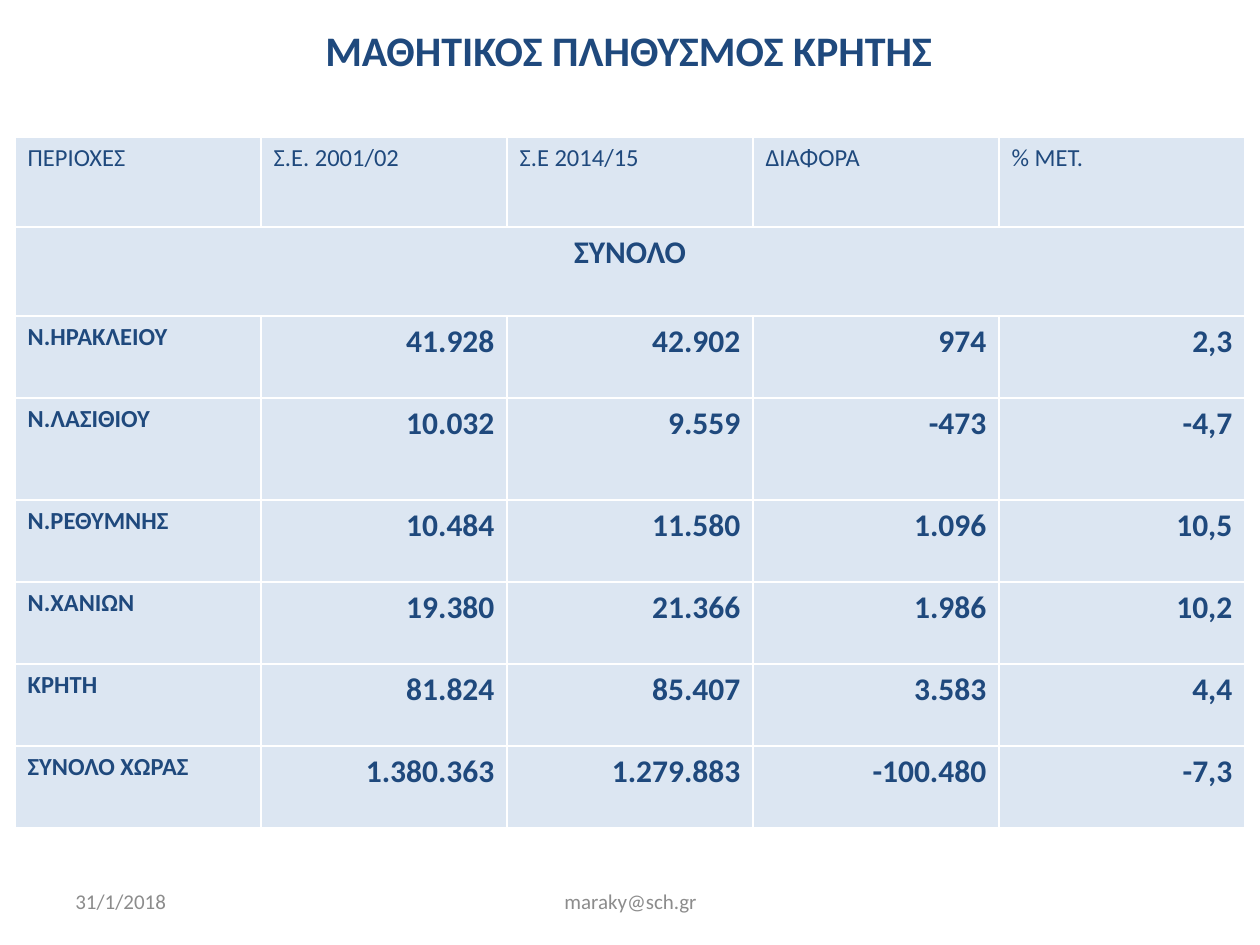
import pptx
import pptx.util
import pptx.dml.color
import pptx.enum.text
import pptx.oxml
import pptx.oxml.ns

Inches = pptx.util.Inches
Pt = pptx.util.Pt
ALIGN = pptx.enum.text.PP_ALIGN
MIDDLE = pptx.enum.text.MSO_ANCHOR.MIDDLE

COLORS = {"navy": "1F497D", "pale": "DCE6F2", "white": "FFFFFF", "gray": "8C8C8C"}
FONT = "Calibri"

HEADS = ["ΠΕΡΙΟΧΕΣ", "Σ.Ε. 2001/02", "Σ.Ε 2014/15", "ΔΙΑΦΟΡΑ", "% ΜΕΤ."]
GROUP = "ΣΥΝΟΛΟ"
AREAS = [
    ["Ν.ΗΡΑΚΛΕΙΟΥ", "41.928", "42.902", "974", "2,3"],
    ["Ν.ΛΑΣΙΘΙΟΥ", "10.032", "9.559", "-473", "-4,7"],
    ["Ν.ΡΕΘΥΜΝΗΣ", "10.484", "11.580", "1.096", "10,5"],
    ["Ν.ΧΑΝΙΩΝ", "19.380", "21.366", "1.986", "10,2"],
    ["ΚΡΗΤΗ", "81.824", "85.407", "3.583", "4,4"],
    ["ΣΥΝΟΛΟ ΧΩΡΑΣ", "1.380.363", "1.279.883", "-100.480", "-7,3"],
]
HEIGHTS = [0.71, 0.71, 0.65, 0.81, 0.65, 0.65, 0.65, 0.65]


def rgb(name):
    return pptx.dml.color.RGBColor.from_string(COLORS[name])


def write(frame, text, size=14, color="navy", bold=False, align=ALIGN.LEFT):
    para = frame.paragraphs[0]
    para.alignment = align
    run = para.add_run()
    run.text = text
    font = run.font
    font.name, font.size, font.bold = FONT, Pt(size), bold
    font.color.rgb = rgb(color)


def edge(cell, color="white", width=1):
    """Draw all four borders of a cell; they must come before its fill."""
    props = cell._tc.get_or_add_tcPr()
    for spot, side in enumerate("LRTB"):
        props.insert(spot, pptx.oxml.parse_xml(
            f'<a:ln{side} {pptx.oxml.ns.nsdecls("a")} w="{Pt(width)}">'
            f'<a:solidFill><a:srgbClr val="{COLORS[color]}"/></a:solidFill>'
            f'</a:ln{side}>'))


class Page:
    def __init__(self, deck):
        self.slide = deck.slides.add_slide(deck.slide_layouts[5])

    def title(self, text, box):
        shape = self.slide.shapes.title
        shape.left, shape.top, shape.width, shape.height = map(Inches, box)
        shape.text_frame.vertical_anchor = MIDDLE
        write(shape.text_frame, text, size=24, bold=True, align=ALIGN.CENTER)

    def note(self, text, box, align=ALIGN.LEFT):
        frame = self.slide.shapes.add_textbox(*map(Inches, box)).text_frame
        frame.word_wrap = True
        frame.vertical_anchor = MIDDLE
        write(frame, text, size=12, color="gray", align=align)

    def table(self, left, top, width):
        box = map(Inches, (left, top, width, sum(HEIGHTS)))
        grid = self.slide.shapes.add_table(len(HEIGHTS), len(HEADS), *box).table
        for row, high in zip(grid.rows, HEIGHTS):
            row.height = Inches(high)
        for cell in grid.iter_cells():
            cell.fill.solid()
            cell.fill.fore_color.rgb = rgb("pale")
            edge(cell)

        for col, head in enumerate(HEADS):
            write(grid.cell(0, col).text_frame, head)
        band = grid.cell(1, 0)
        band.merge(grid.cell(1, len(HEADS) - 1))
        write(band.text_frame, GROUP, size=18, bold=True, align=ALIGN.CENTER)
        for row, (area, *counts) in enumerate(AREAS, 2):
            write(grid.cell(row, 0).text_frame, area, bold=True)
            for col, count in enumerate(counts, 1):
                write(grid.cell(row, col).text_frame, count,
                      size=18, bold=True, align=ALIGN.RIGHT)


def main():
    deck = pptx.Presentation()
    deck.slide_width, deck.slide_height = Inches(10), Inches(7.5)
    page = Page(deck)
    page.title("ΜΑΘΗΤΙΚΟΣ ΠΛΗΘΥΣΜΟΣ ΚΡΗΤΗΣ", (0.48, 0.11, 9.02, 0.57))
    page.table(0.12, 1.09, 9.76)
    page.note("maraky@sch.gr", (3.42, 6.95, 3.17, 0.4), align=ALIGN.CENTER)
    page.note("31/1/2018", (0.5, 6.95, 2.33, 0.4))
    deck.save("out.pptx")


if __name__ == "__main__":
    main()
